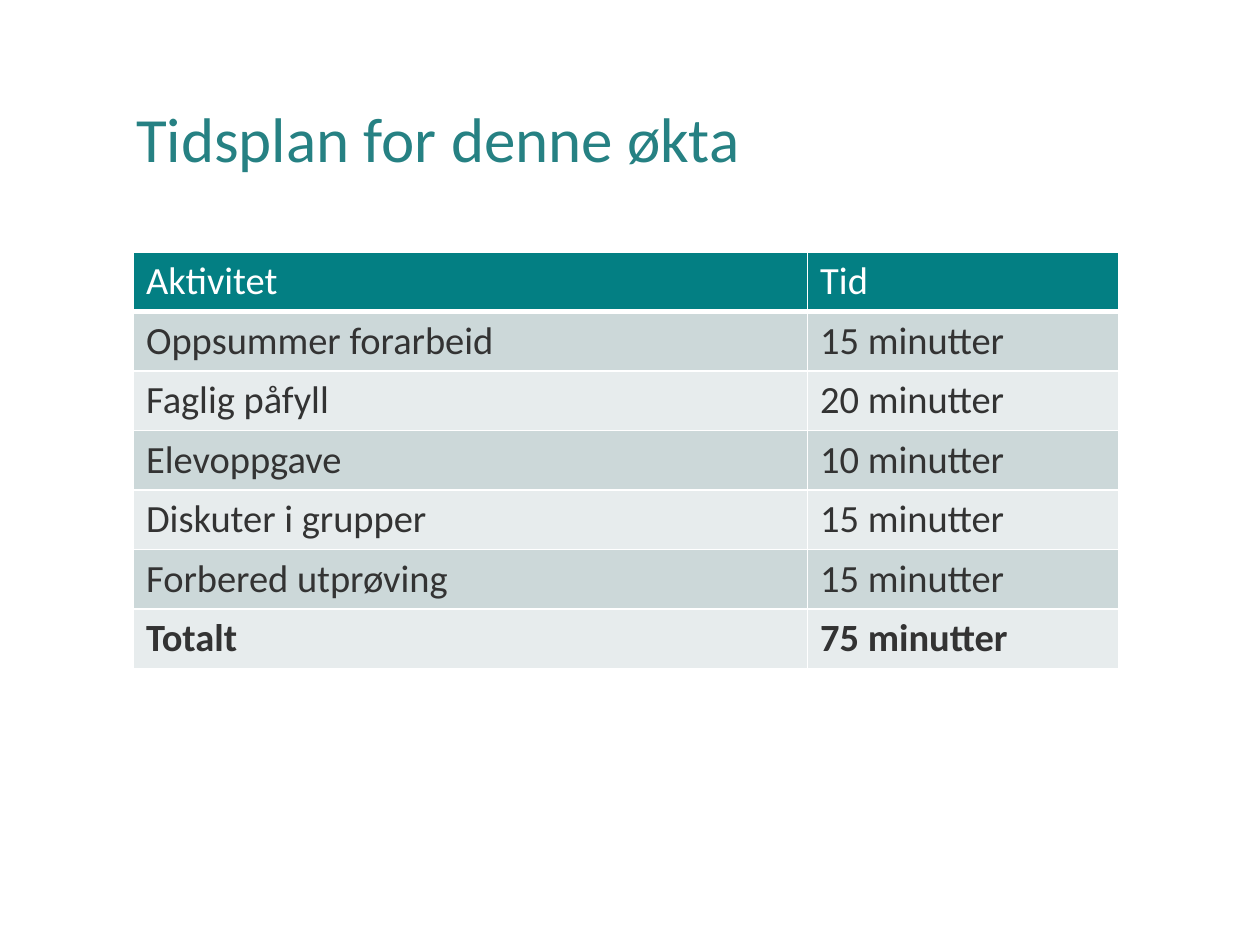
from dataclasses import dataclass

from lxml.etree import SubElement
from pptx import Presentation
from pptx.dml.color import RGBColor as RGB
from pptx.enum.text import MSO_ANCHOR as Anchor, PP_ALIGN as Align
from pptx.oxml.ns import qn
from pptx.util import Inches, Pt


@dataclass(frozen=True)
class Theme:
    """Colours and type sizes of the slide."""
    font: str = "Calibri"
    title: str = "268183"
    header: str = "037F83"
    bands: tuple = ("CCD8D9", "E7ECED")
    ink: str = "333333"
    white: str = "FFFFFF"
    title_size: int = 36
    cell_size: int = 22
    rule: int = 1
    header_rule: int = 3


THEME = Theme()
TITLE = "Tidsplan for denne økta"
SCHEDULE = [
    ("Aktivitet", "Tid"),
    ("Oppsummer forarbeid", "15 minutter"),
    ("Faglig påfyll", "20 minutter"),
    ("Elevoppgave", "10 minutter"),
    ("Diskuter i grupper", "15 minutter"),
    ("Forbered utprøving", "15 minutter"),
    ("Totalt", "75 minutter"),
]
COLUMN_WIDTHS = (5.35, 2.47)


def add_run(p, text, size, colour, bold=False):
    """Add one formatted run to a paragraph."""
    r = p.add_run()
    r.text = text
    r.font.name = THEME.font
    r.font.size = Pt(size)
    r.font.bold = bold
    r.font.color.rgb = RGB.from_string(colour)


def set_borders(cell, widths):
    """Draw white cell borders, with widths in points by side."""
    tc_pr = cell._tc.get_or_add_tcPr()
    for side, width in widths.items():
        line = SubElement(tc_pr, qn(f"a:ln{side}"), w=str(Pt(width)))
        fill = SubElement(line, qn("a:solidFill"))
        SubElement(fill, qn("a:srgbClr"), val=THEME.white)


def place_title(s, box):
    """Place and format the title placeholder in the box."""
    sp = s.shapes.title
    sp.left, sp.top, sp.width, sp.height = map(Inches, box)
    tf = sp.text_frame
    tf.word_wrap = True
    tf.vertical_anchor = Anchor.MIDDLE
    p = tf.paragraphs[0]
    p.alignment = Align.LEFT
    p.line_spacing = 0.9
    add_run(p, TITLE, THEME.title_size, THEME.title)


def place_schedule(s, box):
    """Place the banded schedule table in the box."""
    frame = s.shapes.add_table(len(SCHEDULE), len(COLUMN_WIDTHS), *map(Inches, box))
    table = frame.table
    for column, width in zip(table.columns, COLUMN_WIDTHS):
        column.width = Inches(width)
    last = len(SCHEDULE) - 1
    for i, row in enumerate(SCHEDULE):
        header = i == 0
        fill = THEME.header if header else THEME.bands[(i - 1) % 2]
        widths = dict.fromkeys("LRTB", THEME.rule)
        if header:
            widths["B"] = THEME.header_rule
        elif i == 1:
            widths["T"] = THEME.header_rule
        for j, text in enumerate(row):
            cell = table.cell(i, j)
            set_borders(cell, widths)
            cell.fill.solid()
            cell.fill.fore_color.rgb = RGB.from_string(fill)
            colour = THEME.white if header else THEME.ink
            add_run(cell.text_frame.paragraphs[0], text, THEME.cell_size, colour, i == last)


def main():
    """Build and save the schedule slide."""
    prs = Presentation()
    prs.slide_width, prs.slide_height = Inches(10), Inches(7.5)
    s = prs.slides.add_slide(prs.slide_layouts[5])
    place_title(s, (0.98, 0.4, 8.29, 1.45))
    place_schedule(s, (1.06, 2, sum(COLUMN_WIDTHS), 3.27))
    prs.save("out.pptx")


if __name__ == "__main__":
    main()
